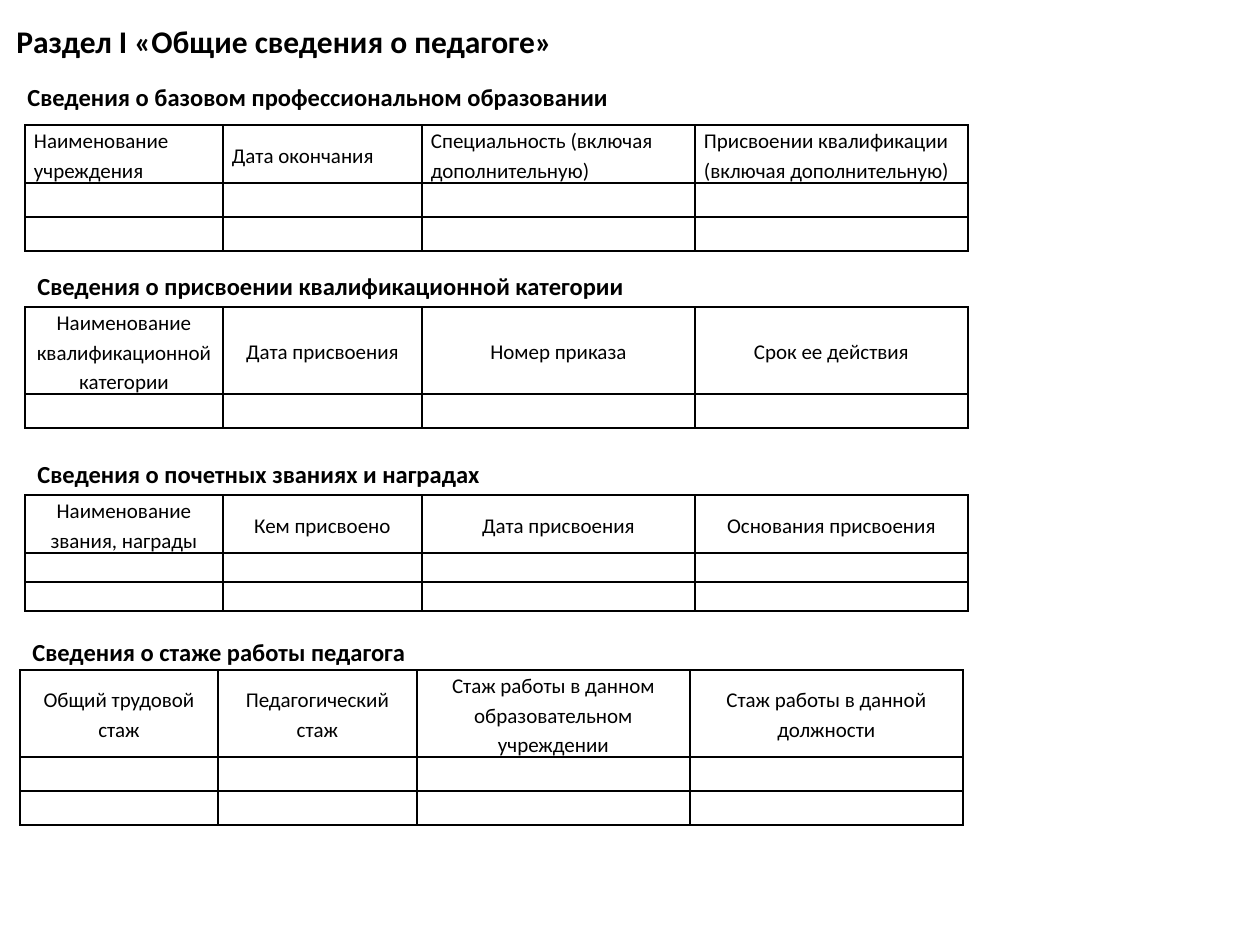
import pptx
import pptx.dml.color
import pptx.enum.text
import pptx.oxml.ns
import pptx.util
from lxml import etree

PX_PER_INCH = 126
COLORS = {"ink": "000000"}
FONT = "Calibri"
COLUMNS = (198, 199, 273, 273)
ALIGN = pptx.enum.text.PP_ALIGN
ANCHOR = pptx.enum.text.MSO_ANCHOR

SECTIONS = [
    {
        "heading": ("Сведения о базовом профессиональном образовании", 15, 76, 735),
        "headers": ("Наименование учреждения", "Дата окончания",
                    "Специальность (включая дополнительную)",
                    "Присвоении квалификации (включая дополнительную)"),
        "origin": (25, 125), "rows": (58, 34, 34), "align": ALIGN.LEFT,
    },
    {
        "heading": ("Сведения о присвоении квалификационной категории", 25, 265, 630),
        "headers": ("Наименование квалификационной категории", "Дата присвоения",
                    "Номер приказа", "Срок ее действия"),
        "origin": (25, 307), "rows": (87, 34), "align": ALIGN.CENTER,
    },
    {
        "heading": ("Сведения о почетных званиях и наградах", 25, 453, 1142),
        "headers": ("Наименование звания, награды", "Кем присвоено",
                    "Дата присвоения", "Основания присвоения"),
        "origin": (25, 495), "rows": (58, 29, 29), "align": ALIGN.CENTER,
    },
    {
        "heading": ("Сведения о стаже работы педагога", 20, 631, 401),
        "headers": ("Общий трудовой стаж", "Педагогический стаж",
                    "Стаж работы в данном образовательном учреждении",
                    "Стаж работы в данной должности"),
        "origin": (20, 670), "rows": (87, 34, 34), "align": ALIGN.CENTER,
    },
]


def px(length):
    return pptx.util.Emu(round(length * 914400 / PX_PER_INCH))


def write_text(frame, text, *, size, bold=False, align=ALIGN.LEFT, spacing=1.0):
    paragraph = frame.paragraphs[0]
    paragraph.alignment = align
    paragraph.line_spacing = spacing
    if not text:
        etree.SubElement(paragraph._p, pptx.oxml.ns.qn("a:endParaRPr"), sz=str(size * 100))
        return
    run = paragraph.add_run()
    run.text = text
    run.font.name = FONT
    run.font.size = pptx.util.Pt(size)
    run.font.bold = bold
    run.font.color.rgb = pptx.dml.color.RGBColor.from_string(COLORS["ink"])


def add_heading(slide, text, left, top, width, height=43, size=14):
    heading = slide.shapes.add_textbox(px(left), px(top), px(width), px(height))
    heading.text_frame.word_wrap = True
    write_text(heading.text_frame, text, size=size, bold=True)


def add_borders(cell):
    properties = cell._tc.get_or_add_tcPr()
    for side in ("lnL", "lnR", "lnT", "lnB"):
        border = etree.SubElement(properties, pptx.oxml.ns.qn(f"a:{side}"),
                                  w=str(pptx.util.Pt(1)))
        fill = etree.SubElement(border, pptx.oxml.ns.qn("a:solidFill"))
        etree.SubElement(fill, pptx.oxml.ns.qn("a:srgbClr"), val=COLORS["ink"])


def format_cell(cell, text, align):
    cell.margin_left = cell.margin_right = px(9)
    cell.margin_top = cell.margin_bottom = 0
    cell.vertical_anchor = ANCHOR.MIDDLE
    add_borders(cell)
    cell.fill.background()
    write_text(cell.text_frame, text, size=12, align=align, spacing=1.15)


def add_form_table(slide, headers, origin, rows, align):
    left, top = origin
    table = slide.shapes.add_table(len(rows), len(COLUMNS), px(left), px(top),
                                   px(sum(COLUMNS)), px(sum(rows))).table
    table.first_row = False
    table.horz_banding = False
    for column, width in zip(table.columns, COLUMNS):
        column.width = px(width)
    for index, (row, height) in enumerate(zip(table.rows, rows)):
        row.height = px(height)
        for cell, header in zip(row.cells, headers):
            format_cell(cell, header if index == 0 else "", align)


def main():
    presentation = pptx.Presentation()
    presentation.slide_width = px(1260)
    presentation.slide_height = px(945)
    slide = presentation.slides.add_slide(presentation.slide_layouts[6])
    add_heading(slide, "Раздел I «Общие сведения о педагоге»", 4, 16, 567, height=50, size=18)
    for section in SECTIONS:
        add_heading(slide, *section["heading"])
        add_form_table(slide, section["headers"], section["origin"],
                       section["rows"], section["align"])
    presentation.save("out.pptx")


if __name__ == "__main__":
    main()
